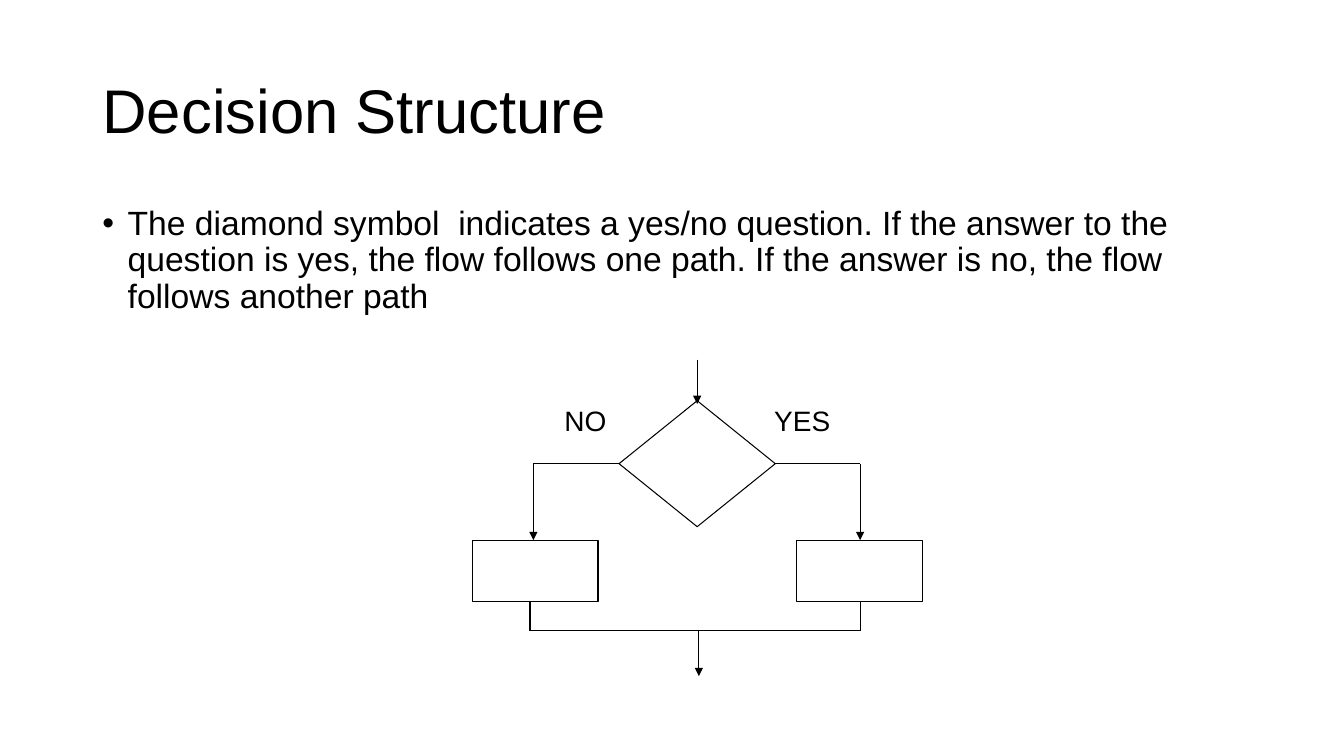
"""Build the decision structure slide with its yes/no flowchart."""
import dataclasses

import pptx
import pptx.dml.color
import pptx.enum.shapes
import pptx.enum.text
import pptx.oxml
import pptx.oxml.ns
import pptx.util

SHAPE = pptx.enum.shapes.MSO_SHAPE
ALIGN = pptx.enum.text.PP_ALIGN
ANCHOR = pptx.enum.text.MSO_ANCHOR


@dataclasses.dataclass(frozen=True)
class Theme:
    """Colours, type sizes and the slide grid."""
    font: str = "Arial"
    ink: pptx.dml.color.RGBColor = pptx.dml.color.RGBColor(0, 0, 0)
    title_size: float = 44
    body_size: float = 24
    label_size: float = 20
    line_width: float = 0.75
    width: float = 13.33
    height: float = 7.5
    columns: int = 160
    rows: int = 90


THEME = Theme()


def across(columns):
    """Return the length of a number of grid columns."""
    return pptx.util.Inches(THEME.width * columns / THEME.columns)


def down(rows):
    """Return the length of a number of grid rows."""
    return pptx.util.Inches(THEME.height * rows / THEME.rows)


def area(left, top, width, height):
    """Return a grid rectangle as slide lengths."""
    return across(left), down(top), across(width), down(height)


def write(box, text, size, align, anchor, spacing=1.0):
    """Put one formatted paragraph into a box and return it."""
    frame = box.text_frame
    frame.text = text
    frame.word_wrap = True
    frame.auto_size = pptx.enum.text.MSO_AUTO_SIZE.NONE
    frame.vertical_anchor = anchor
    para = frame.paragraphs[0]
    para.alignment = align
    para.line_spacing = spacing
    for span in para.runs:
        span.font.name = THEME.font
        span.font.size = pptx.util.Pt(size)
        span.font.color.rgb = THEME.ink
    return para


def place(box, left, top, width, height):
    """Move a placeholder to a grid rectangle."""
    box.left, box.top, box.width, box.height = area(left, top, width, height)


def add_bullet(para):
    """Give a paragraph a hanging round bullet."""
    para.space_before = pptx.util.Pt(10)
    properties = para._p.get_or_add_pPr()
    indent = pptx.util.Inches(0.25)
    properties.set("marL", str(indent))
    properties.set("indent", str(-indent))
    bullet = pptx.oxml.parse_xml(
        f'<a:buChar {pptx.oxml.ns.nsdecls("a")} char="•"/>')
    properties.append(bullet)


def style_line(line):
    """Apply the thin ink outline."""
    line.color.rgb = THEME.ink
    line.width = pptx.util.Pt(THEME.line_width)


def add_symbol(slide, kind, left, top, width, height):
    """Draw an unfilled flowchart symbol."""
    symbol = slide.shapes.add_shape(kind, *area(left, top, width, height))
    symbol.shadow.inherit = False
    symbol.fill.background()
    style_line(symbol.line)


def add_flow(slide, *points, arrow=False):
    """Join grid points with straight lines, the last optionally an arrow."""
    for start, end in zip(points, points[1:]):
        flow = slide.shapes.add_connector(
            pptx.enum.shapes.MSO_CONNECTOR.STRAIGHT,
            across(start[0]), down(start[1]), across(end[0]), down(end[1]))
        style_line(flow.line)
        namespace = pptx.oxml.ns.nsdecls("a")
        if arrow and end == points[-1]:
            flow.line._get_or_add_ln().append(
                pptx.oxml.parse_xml(f'<a:tailEnd {namespace} type="triangle"/>'))
        flow._element.spPr.append(
            pptx.oxml.parse_xml(f"<a:effectLst {namespace}/>"))


def add_label(slide, text, left, top):
    """Add a centred branch label."""
    box = slide.shapes.add_textbox(*area(left, top, 10, 5.2))
    write(box, text, THEME.label_size, ALIGN.CENTER, ANCHOR.TOP)


def add_flowchart(slide):
    """Draw the decision, its two branches and their merge."""
    center, middle, half_width, half_height = 83, 55.2, 9.3, 7.5
    box_width, box_top, box_height, merge = 15, 64.3, 7.3, 75.1
    box_bottom = box_top + box_height
    add_symbol(slide, SHAPE.FLOWCHART_DECISION, center - half_width,
               middle - half_height, 2 * half_width, 2 * half_height)
    add_flow(slide, (center, 42.8), (center, 48.1), arrow=True)
    branches = (("NO", -1, 63.5, 63.1, 56.2, 64.7),
                ("YES", 1, 102.4, 102.4, 94.8, 90.5))
    for text, side, entry, leave, box_left, label_left in branches:
        add_symbol(slide, SHAPE.RECTANGLE, box_left, box_top,
                   box_width, box_height)
        add_flow(slide, (center + side * half_width, middle),
                 (entry, middle), (entry, box_top), arrow=True)
        add_flow(slide, (leave, box_bottom), (leave, merge), (center, merge))
        add_label(slide, text, label_left, 47.5)
    add_flow(slide, (center + 0.2, merge), (center + 0.2, 80.5), arrow=True)


def main():
    """Build and save the deck."""
    deck = pptx.Presentation()
    deck.slide_width = across(THEME.columns)
    deck.slide_height = down(THEME.rows)
    slide = deck.slides.add_slide(deck.slide_layouts[1])
    title, body = slide.shapes.title, slide.placeholders[1]
    place(title, 11, 4.8, 138, 17.4)
    write(title, "Decision Structure", THEME.title_size,
          ALIGN.LEFT, ANCHOR.MIDDLE, 0.9)
    place(body, 11, 24, 138, 57.1)
    add_bullet(write(
        body,
        "The diamond symbol  indicates a yes/no question. If the answer to "
        "the question is yes, the flow follows one path. If the answer is "
        "no, the flow follows another path",
        THEME.body_size, ALIGN.LEFT, ANCHOR.TOP, 0.9))
    add_flowchart(slide)
    deck.save("out.pptx")


if __name__ == "__main__":
    main()
